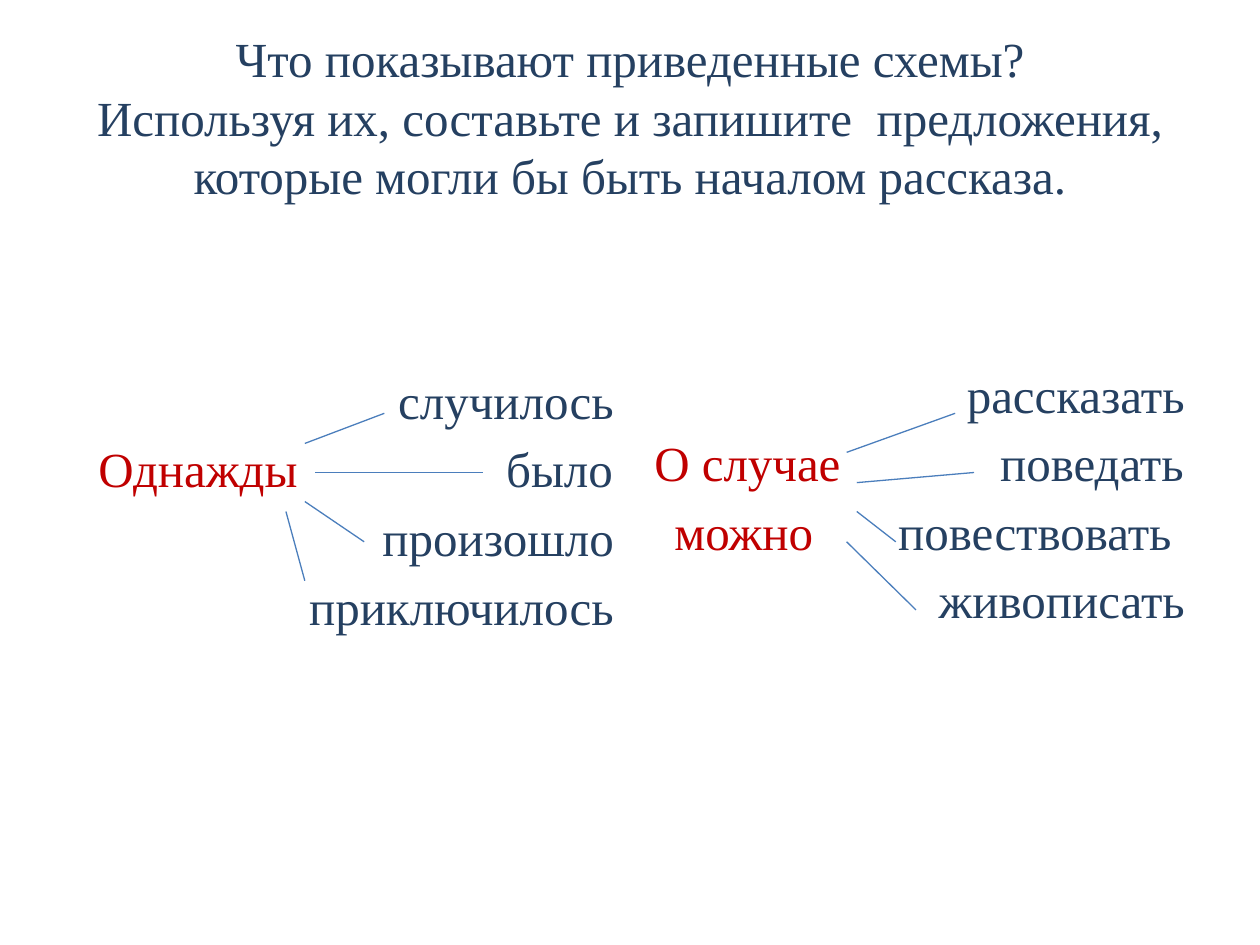
from lxml import etree
from pptx import Presentation
from pptx.dml.color import RGBColor
from pptx.enum import shapes, text
from pptx.oxml.ns import qn
from pptx.util import Pt

NAVY = RGBColor(0x25, 0x40, 0x61)
RED = RGBColor(0xC0, 0x00, 0x00)
BLUE = RGBColor(0x4B, 0x7E, 0xBC)
FONT = "Times New Roman"
WORD_EDGE = 303.5


def style(paragraph, align):
    paragraph.alignment = align
    paragraph.font.name = FONT
    paragraph.font.size = Pt(28)
    paragraph.font.color.rgb = NAVY


def set_tabs(paragraph, stops):
    properties = paragraph._p.get_or_add_pPr()
    tabs = etree.Element(qn("a:tabLst"))
    for position, align in stops:
        etree.SubElement(tabs, qn("a:tab"), pos=str(Pt(position)), algn=align)
    properties.insert_element_before(tabs, "a:defRPr", "a:extLst")


deck = Presentation()
deck.slide_width, deck.slide_height = Pt(720), Pt(540)
page = deck.slides.add_slide(deck.slide_layouts[5])

# Title
title = page.shapes.title
title.left, title.top, title.width, title.height = Pt(36), Pt(21.6), Pt(648), Pt(90)
title.text_frame.text = (
    "Что показывают приведенные схемы?\v"
    "Используя их, составьте и запишите  предложения, "
    "которые могли бы быть началом рассказа."
)
title.text_frame.vertical_anchor = text.MSO_ANCHOR.MIDDLE
style(title.text_frame.paragraphs[0], text.PP_ALIGN.CENTER)

# Word schemes: left, top, rows of (keyword, keyword start, word, word edge)
schemes = [
    (39.6, 129.6, [
        (None, 0, "случилось", WORD_EDGE),
        ("Однажды", 9.5, "было", WORD_EDGE),
        (None, 0, "произошло", WORD_EDGE),
        (None, 0, "приключилось", WORD_EDGE),
    ]),
    (365.8, 126, [
        (None, 0, "рассказать", WORD_EDGE),
        ("О случае", 1, "поведать", WORD_EDGE),
        ("можно", 12.5, "повествовать", WORD_EDGE - 7),
        (None, 0, "живописать", WORD_EDGE),
    ]),
]
for left, top, rows in schemes:
    box = page.shapes.add_textbox(Pt(left), Pt(top), Pt(318.2), Pt(356.4))
    frame = box.text_frame
    frame.word_wrap = True
    frame.margin_top = Pt(82)
    for index, (keyword, start, word, edge) in enumerate(rows):
        para = frame.paragraphs[0] if index == 0 else frame.add_paragraph()
        para.space_before = Pt(5.6)
        if keyword:
            style(para, text.PP_ALIGN.LEFT)
            set_tabs(para, [(start, "l"), (edge, "r")])
            span = para.add_run()
            span.text = "\t" + keyword
            span.font.color.rgb = RED
            para.add_run().text = "\t" + word
        else:
            style(para, text.PP_ALIGN.RIGHT)
            para.add_run().text = word

# Lines from the keywords to the words: x1, y1, x2, y2
links = [
    (174.2, 253.4, 219.6, 236.2),
    (163.4, 292.3, 174.2, 331.9),
    (180, 270, 275.8, 270),
    (174.2, 286.6, 208.1, 309.6),
    (483.8, 258.5, 545.8, 236.2),
    (483.8, 309.6, 523.4, 348.5),
    (489.6, 275.8, 556.6, 270),
    (489.6, 292.3, 511.9, 309.6),
]
for ends in links:
    link = page.shapes.add_connector(
        shapes.MSO_CONNECTOR.STRAIGHT, *(Pt(value) for value in ends))
    link.line.color.rgb = BLUE
    link.line.width = Pt(0.75)
    etree.SubElement(link._element.spPr, qn("a:effectLst"))

deck.save("out.pptx")
